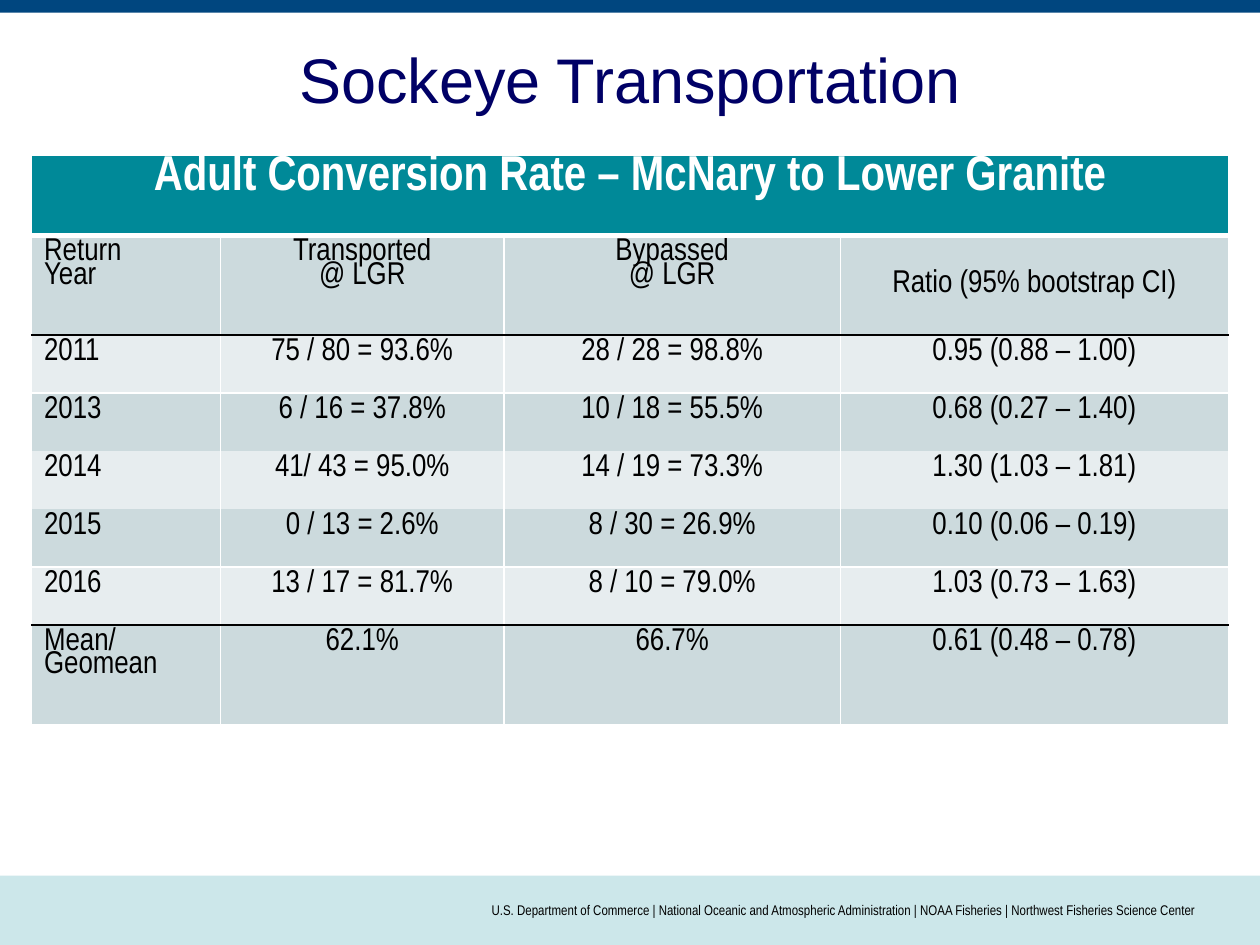
from lxml import etree
from pptx import Presentation
from pptx.dml.color import RGBColor
from pptx.enum.shapes import MSO_SHAPE
from pptx.enum.text import MSO_ANCHOR, PP_ALIGN
from pptx.oxml.ns import qn
from pptx.util import Inches, Pt

RECTANGLE = MSO_SHAPE.RECTANGLE
MIDDLE, TOP = MSO_ANCHOR.MIDDLE, MSO_ANCHOR.TOP
LEFT, CENTER, RIGHT = PP_ALIGN.LEFT, PP_ALIGN.CENTER, PP_ALIGN.RIGHT
TITLE_ONLY = 5
COLORS = {
    "navy": "000066", "top bar": "00467F", "footer": "CCE7EA", "teal": "008998",
    "dark band": "CCDADD", "light band": "E7EDEF", "white": "FFFFFF", "black": "000000",
}
HEADING = "Adult Conversion Rate – McNary to Lower Granite"
ROWS = [
    ["Return\nYear", "Transported\n@ LGR", "Bypassed\n@ LGR", "Ratio (95% bootstrap CI)"],
    ["2011", "75 / 80 = 93.6%", "28 / 28 = 98.8%", "0.95 (0.88 – 1.00)"],
    ["2013", "6 / 16 = 37.8%", "10 / 18 = 55.5%", "0.68 (0.27 – 1.40)"],
    ["2014", "41/ 43 = 95.0%", "14 / 19 = 73.3%", "1.30 (1.03 – 1.81)"],
    ["2015", "0 / 13 = 2.6%", "8 / 30 = 26.9%", "0.10 (0.06 – 0.19)"],
    ["2016", "13 / 17 = 81.7%", "8 / 10 = 79.0%", "1.03 (0.73 – 1.63)"],
    ["Mean/\nGeomean", "62.1%", "66.7%", "0.61 (0.48 – 0.78)"],
]
COLUMN_WIDTHS = [1.5, 2.25, 2.67, 3.08]
ROW_HEIGHTS = [0.64, 0.79, 0.46, 0.46, 0.46, 0.46, 0.46, 0.79]
WHITE_RULE, BLACK_RULE = ("white", 1), ("black", 1)
ROW_RULES = [WHITE_RULE, ("white", 3), BLACK_RULE, WHITE_RULE, None, None,
             WHITE_RULE, BLACK_RULE, WHITE_RULE]
FOOTER = ("U.S. Department of Commerce | National Oceanic and Atmospheric Administration"
          " | NOAA Fisheries | Northwest Fisheries Science Center")


def color(name):
    """Return the named palette colour."""
    return RGBColor.from_string(COLORS[name])


def format_text(text_frame, size, font_name, color_name, alignment, bold=False, spacing=None):
    """Format every paragraph and run of a text frame."""
    for paragraph in text_frame.paragraphs:
        paragraph.alignment = alignment
        paragraph.line_spacing = spacing
        for run in paragraph.runs:
            run.font.size = Pt(size)
            run.font.name = font_name
            run.font.bold = bold
            run.font.color.rgb = color(color_name)


def add_bar(slide, box, color_name):
    """Add a plain filled bar."""
    bar = slide.shapes.add_shape(RECTANGLE, *map(Inches, box))
    bar.shadow.inherit = False
    bar.fill.solid()
    bar.fill.fore_color.rgb = color(color_name)
    bar.line.fill.background()


def add_footer(slide, box):
    """Add the footer band with its right-aligned credit line."""
    left, top, width, height = box
    add_bar(slide, box, "footer")
    text_box = slide.shapes.add_textbox(
        Inches(left + 2.5), Inches(top), Inches(width - 3), Inches(height))
    text_frame = text_box.text_frame
    text_frame.word_wrap = True
    text_frame.margin_left = text_frame.margin_right = 0
    text_frame.vertical_anchor = MIDDLE
    text_frame.text = FOOTER
    format_text(text_frame, 8, "Arial Narrow", "black", RIGHT)


def add_title(slide, box):
    """Place and format the title placeholder."""
    title = slide.shapes.title
    title.left, title.top, title.width, title.height = map(Inches, box)
    title.text_frame.text = "Sockeye Transportation"
    title.text_frame.vertical_anchor = MIDDLE
    format_text(title.text_frame, 36, "Arial", "navy", CENTER)


def set_border(cell, side, rule):
    """Draw one cell border, or clear it when there is no rule."""
    properties = cell._tc.get_or_add_tcPr()
    line = etree.SubElement(properties, qn(f"a:ln{side}"))
    if rule is None:
        etree.SubElement(line, qn("a:noFill"))
        return
    color_name, width = rule
    line.set("w", str(Pt(width)))
    fill = etree.SubElement(line, qn("a:solidFill"))
    etree.SubElement(fill, qn("a:srgbClr"), val=COLORS[color_name])


def style_cell(cell, row, fill_name):
    """Give a cell its borders, fill and anchor."""
    rules = {"L": WHITE_RULE, "R": WHITE_RULE, "T": ROW_RULES[row], "B": ROW_RULES[row + 1]}
    for side, rule in rules.items():
        set_border(cell, side, rule)
    cell.fill.solid()
    cell.fill.fore_color.rgb = color(fill_name)
    cell.vertical_anchor = TOP


def add_rate_table(slide, box):
    """Add the conversion rate table with its merged heading row."""
    frame = slide.shapes.add_table(len(ROW_HEIGHTS), len(COLUMN_WIDTHS), *map(Inches, box))
    table = frame.table
    for column, width in zip(table.columns, COLUMN_WIDTHS):
        column.width = Inches(width)
    for row, height in zip(table.rows, ROW_HEIGHTS):
        row.height = Inches(height)

    heading = table.cell(0, 0)
    heading.merge(table.cell(0, len(COLUMN_WIDTHS) - 1))
    for cell in table.rows[0].cells:
        style_cell(cell, 0, "teal")
    heading.text_frame.text = HEADING
    format_text(heading.text_frame, 28, "Arial Narrow", "white", CENTER, True, 0.8)

    for row, values in enumerate(ROWS, start=1):
        for column, value in enumerate(values):
            cell = table.cell(row, column)
            style_cell(cell, row, "dark band" if row % 2 else "light band")
            cell.text_frame.text = value
            alignment = CENTER if column else LEFT
            format_text(cell.text_frame, 18, "Arial Narrow", "black", alignment, False, 0.8)
    table.cell(1, len(COLUMN_WIDTHS) - 1).vertical_anchor = MIDDLE


def main():
    """Build the slide and save it."""
    presentation = Presentation()
    presentation.slide_width, presentation.slide_height = Inches(10), Inches(7.5)
    slide = presentation.slides.add_slide(presentation.slide_layouts[TITLE_ONLY])
    add_footer(slide, (0, 6.95, 10, 0.55))
    add_bar(slide, (0, 0, 10, 0.1), "top bar")
    add_title(slide, (0, 0, 10, 1.25))
    add_rate_table(slide, (0.25, 1.23, 9.5, 4.52))
    presentation.save("out.pptx")


if __name__ == "__main__":
    main()
